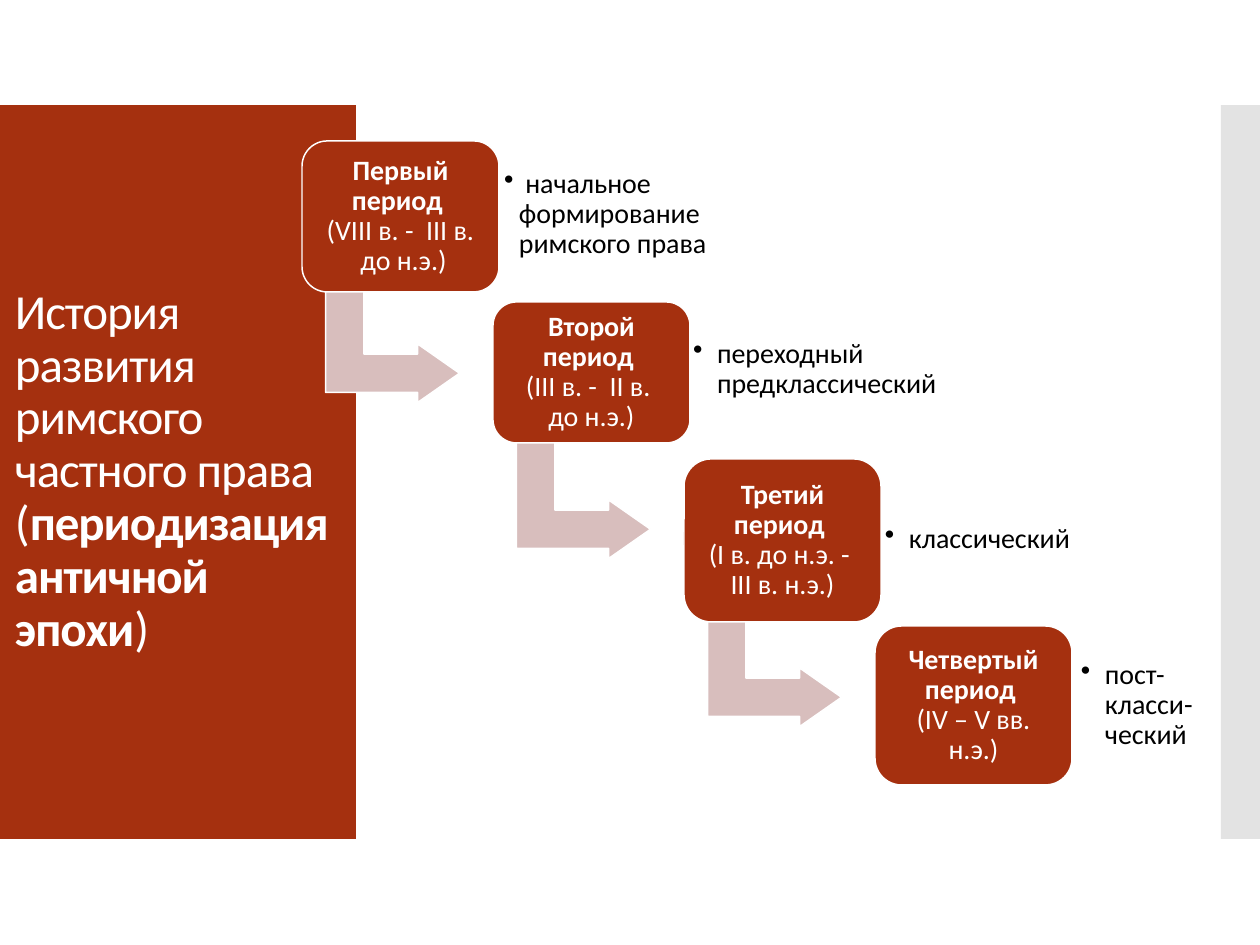
"""Build the stepped slide on the periods of Roman private law."""
from lxml import etree
from pptx import Presentation
from pptx import util as u
from pptx.dml.color import RGBColor
from pptx.enum import shapes, text
from pptx.oxml.ns import qn

RED, PINK, WHITE, BLACK = "A5300F", "D8BEBD", "FFFFFF", "000000"
KIND = shapes.MSO_SHAPE
TITLE = [("История развития римского частного права (", False),
         ("периодизация античной эпохи", True), (")", False)]
STEPS = [
    {"name": "Первый период ", "dates": "(VIII в. -  III в.\n до н.э.)",
     "top": 141, "high": 151, "arrow": 277,
     "note": " начальное формирование римского права",
     "area": (496, 159, 258, 111), "hang": 15, "pad": 8},
    {"name": "Второй период ", "dates": "(III в. -  II в. \nдо н.э.)",
     "top": 302, "high": 141, "arrow": 433,
     "note": "переходный предклассический",
     "area": (684, 314, 297, 111), "hang": 24, "pad": 9},
    {"name": "Третий период ", "dates": "(I в. до н.э. -  III в. н.э.)",
     "top": 459, "high": 163, "arrow": 601,
     "note": "классический",
     "area": (876, 484, 261, 111), "hang": 24, "pad": 9},
    {"name": "Четвертый период ", "dates": "(IV – V вв. н.э.)",
     "top": 626, "high": 159, "arrow": None,
     "note": "пост-класси-ческий",
     "area": (1072, 650, 144, 111), "hang": 24, "pad": 9},
]
LEFT, STRIDE, WIDE = 302, 191, 197


def px(n):
    return u.Emu(round(n * 914400 / 126))


def hue(code):
    return RGBColor.from_string(code)


def shape(kind, area, fill, line=None, adj=(), turn=0, alpha=None):
    item = slide.shapes.add_shape(kind, *map(px, area))
    item.shadow.inherit = False
    item.fill.solid()
    item.fill.fore_color.rgb = hue(fill)
    if alpha:
        tint = item.fill._xPr.find(".//" + qn("a:srgbClr"))
        etree.SubElement(tint, qn("a:alpha"), val=str(alpha * 1000))
    if line:
        item.line.color.rgb = hue(line)
        item.line.width = u.Pt(0.85)
    else:
        item.line.fill.background()
    for i, value in enumerate(adj):
        item.adjustments[i] = value
    item.rotation = turn
    return item


def write(item, runs, size=16, color=WHITE, align=text.PP_ALIGN.LEFT,
          pad=9, side=None, hang=0, track=0):
    frame = item.text_frame
    frame.word_wrap = True
    frame.vertical_anchor = text.MSO_ANCHOR.MIDDLE
    frame.margin_top = frame.margin_bottom = px(pad)
    frame.margin_left = frame.margin_right = px(side or pad)
    para = frame.paragraphs[0]
    para.alignment = align
    para.line_spacing = 0.9
    if hang:
        props = para._p.get_or_add_pPr()
        props.set("marL", str(px(hang)))
        props.set("indent", str(-px(hang)))
        etree.SubElement(props, qn("a:buChar"), char="•")
    for words, bold in runs:
        for i, part in enumerate(words.split("\n")):
            if i:
                para.add_line_break()
            if not part:
                continue
            run = para.add_run()
            run.text = part
            font = run.font
            font.name, font.size, font.bold = "Calibri", u.Pt(size), bold
            font.color.rgb = hue(color)
            if track:
                run._r.get_or_add_rPr().set("spc", str(track))


def label(area, runs, **style):
    write(slide.shapes.add_textbox(*map(px, area)), runs, **style)


deck = Presentation()
deck.slide_width, deck.slide_height = px(1260), px(945)
slide = deck.slides.add_slide(deck.slide_layouts[6])

shape(KIND.RECTANGLE, (0, 105, 356, 734), RED)
shape(KIND.RECTANGLE, (1221, 105, 39, 734), "C8C8C8", alpha=50)
label((3, 155, 341, 634), TITLE, size=28, pad=6, side=12, track=-60)

for i, step in enumerate(STEPS):
    left = LEFT + STRIDE * i
    if step["arrow"]:
        shape(KIND.BENT_UP_ARROW, (left + 32, step["arrow"], 117, 134), PINK,
              line=WHITE, adj=(0.328, 0.25, 0.358), turn=90)
    box = shape(KIND.ROUNDED_RECTANGLE, (left, step["top"], WIDE, step["high"]),
                RED, line=WHITE, adj=(0.167,))
    write(box, [(step["name"] + "\n", True), (step["dates"], False)],
          align=text.PP_ALIGN.CENTER)
    label(step["area"], [(step["note"], False)], color=BLACK,
          pad=step["pad"], hang=step["hang"])

deck.save("out.pptx")
